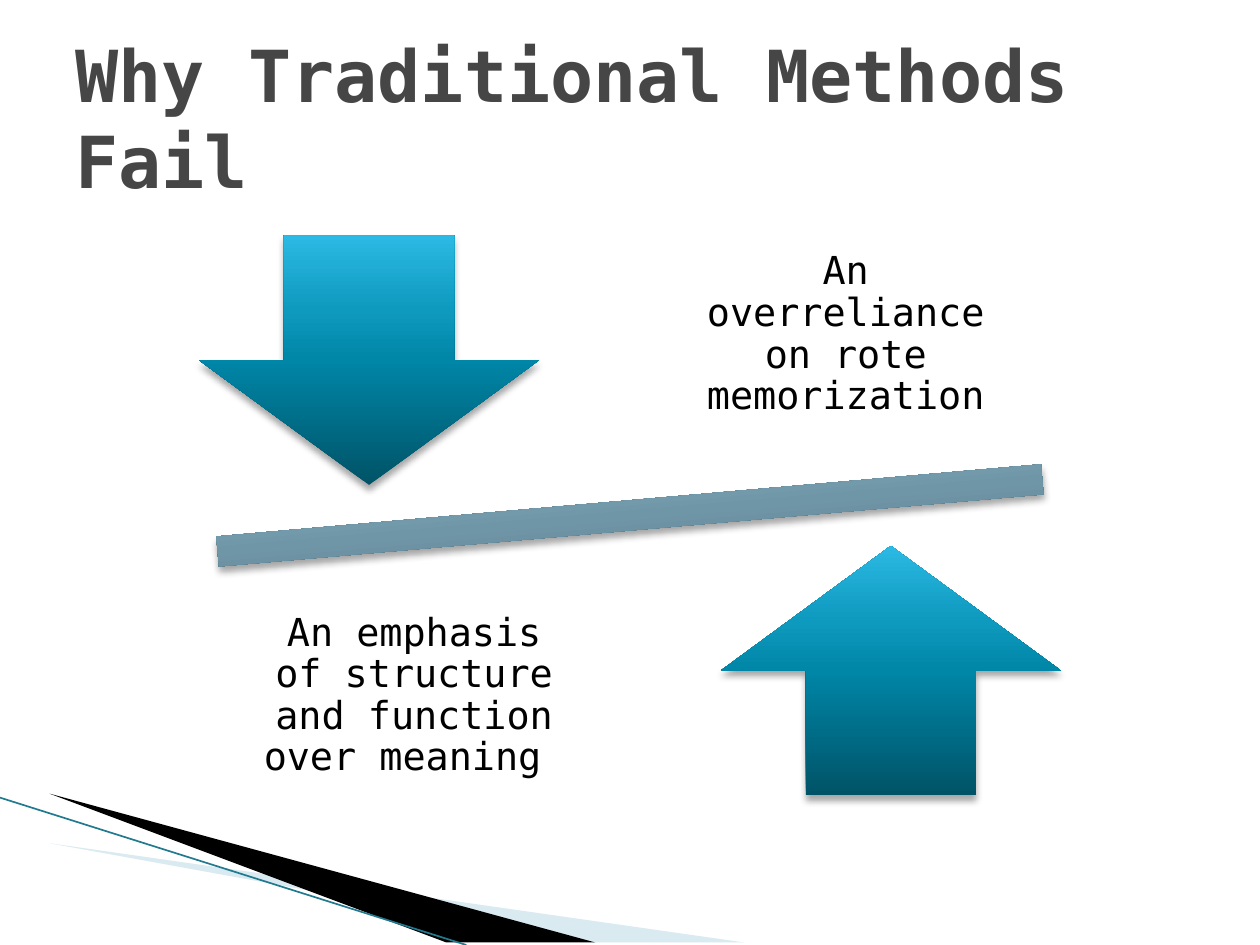
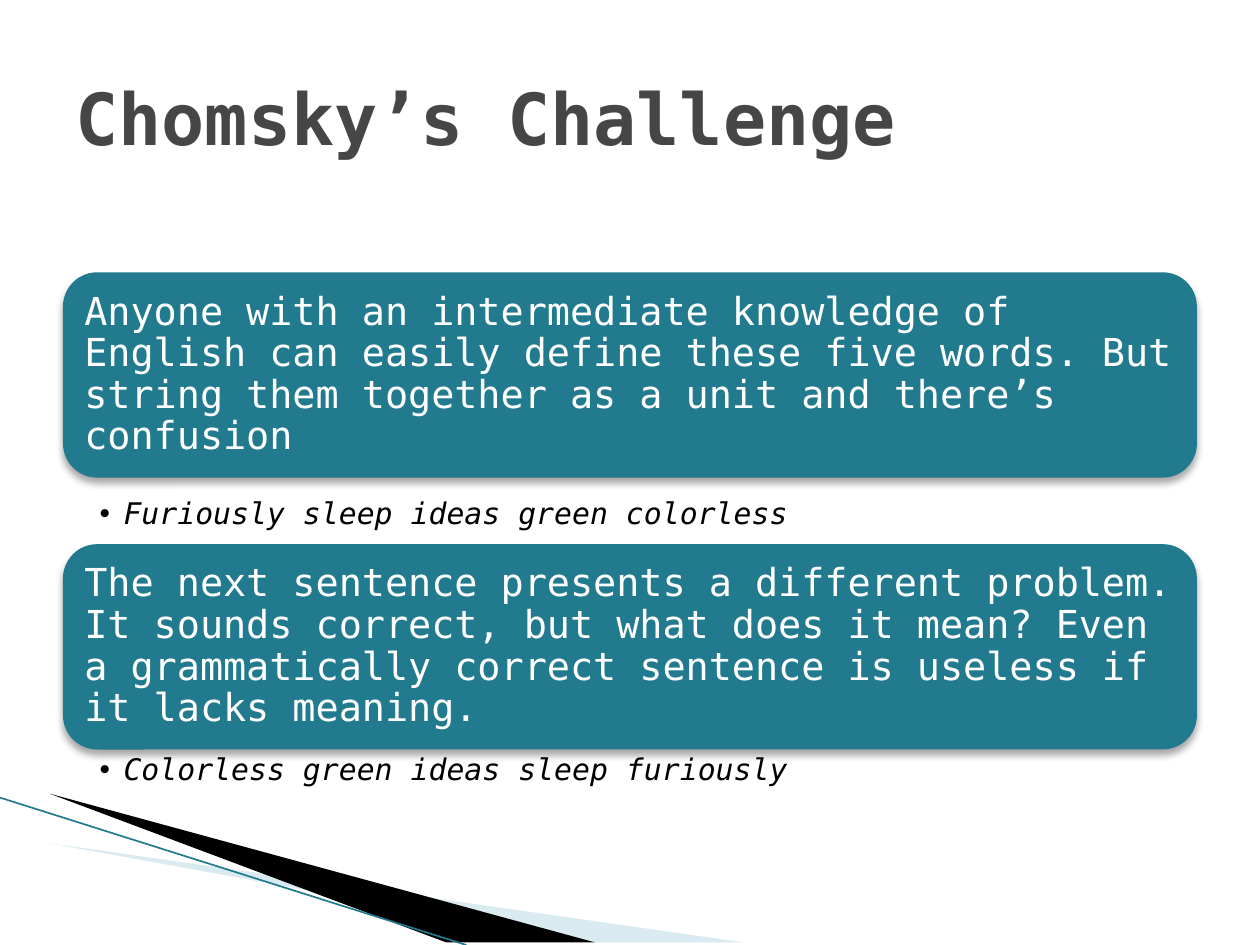
from dataclasses import dataclass

from lxml.etree import SubElement
from pptx import Presentation
from pptx.dml.color import RGBColor
from pptx.enum.shapes import MSO_CONNECTOR, MSO_SHAPE
from pptx.enum.text import MSO_ANCHOR, MSO_AUTO_SIZE, PP_ALIGN
from pptx.oxml.ns import qn
from pptx.util import Cm, Pt

# Content
SCALE = {
    "title": "Why Traditional Methods Fail",
    "sides": [  # arrow, text, side of the pivot
        (MSO_SHAPE.DOWN_ARROW, "An overreliance on rote memorization", 1),
        (MSO_SHAPE.UP_ARROW,
         "An emphasis of structure and function over meaning ", -1),
    ],
}
CLAIMS = {
    "title": "Chomsky’s Challenge",
    "items": [  # claim, its top, example, its top
        ("Anyone with an intermediate knowledge of English can easily define "
         "these five words. But string them together as a unit and there’s "
         "confusion", 5.49,
         "Furiously sleep ideas green colorless", 9.98),
        ("The next sentence presents a different problem. It sounds correct, "
         "but what does it mean? Even a grammatically correct sentence is "
         "useless if it lacks meaning.", 10.97,
         "Colorless green ideas sleep furiously", 15.14),
    ],
}


# Theme
@dataclass(frozen=True)
class Theme:
    font: str = "DejaVu Sans Mono"
    head: str = "464646"
    ink: str = "000000"
    paper: str = "FFFFFF"
    teal: str = "227A8F"
    pale: str = "A0CBDC"
    blue: tuple = ((0, "005367"), (50, "0086A7"), (70, "0E9ABE"), (100, "2CB9E3"))
    grey: tuple = ((0, "445E68"), (50, "6F96A7"), (70, "86AFC1"), (100, "A6D5E9"))
    big: int = 41
    mid: int = 22
    small: int = 17


LOOK = Theme()

# Layout, in centimetres
WIDE, HIGH = 25.4, 19.05
EDGE, SPAN = 1.27, 22.86
PIVOT = (12.7, 10.39)
BAR = (22.71, 2.59)
ARROW, ARROW_OFF = (6.86, 5.03), (-5.26, -3.13)
NOTE, NOTE_OFF = (7.32, 5.28), (4.35, -3.64)
BOX_HIGH, LINE_HIGH = 4.14, 1.02
HANG = 0.48
PALE_BAND = [(1.4, 16.51), (15.0, HIGH), (11.5, HIGH)]
DARK_BAND = [(1.37, 16.49), (11.5, HIGH), (9.4, HIGH)]
RULE = (0, 16.08, 9.4, HIGH)


def place(centre, off, size, sign=1):
    """Left, top, width and height of a part set off from a centre."""
    spot = [c + sign * o - s / 2 for c, o, s in zip(centre, off, size)]
    return [Cm(n) for n in (*spot, *size)]


def tint(fill, colour):
    fill.solid()
    fill.fore_color.rgb = RGBColor.from_string(colour)


def blend(fill, stops):
    fill.gradient()
    fill.gradient_angle = 90
    ramp = fill._xPr.find(qn("a:gradFill")).find(qn("a:gsLst"))
    ramp.clear()
    for spot, colour in stops:
        stop = SubElement(ramp, qn("a:gs"), pos=str(spot * 1000))
        SubElement(stop, qn("a:srgbClr"), val=colour)


def cast(shape):
    """Give a shape the soft shadow below it and no outline."""
    shape.line.fill.background()
    shape.shadow.inherit = False
    effect = shape._element.spPr.find(qn("a:effectLst"))
    shade = SubElement(effect, qn("a:outerShdw"), blurRad=str(Pt(4)),
                       dist=str(Pt(3)), dir="5400000", rotWithShape="0")
    colour = SubElement(shade, qn("a:srgbClr"), val=LOOK.ink)
    SubElement(colour, qn("a:alpha"), val="35000")


def write(shape, text, size, colour, pad=(0.25, 0.13, 0.25, 0.13),
          align=PP_ALIGN.LEFT, anchor=MSO_ANCHOR.MIDDLE, space=0.9):
    frame = shape.text_frame
    frame.text = text
    frame.word_wrap = True
    frame.auto_size = MSO_AUTO_SIZE.NONE
    frame.vertical_anchor = anchor
    (frame.margin_left, frame.margin_top,
     frame.margin_right, frame.margin_bottom) = [Cm(n) for n in pad]
    para = frame.paragraphs[0]
    para.alignment, para.line_spacing = align, space
    para.space_before = Pt(0)
    font = para.font
    font.name, font.size = LOOK.font, Pt(size)
    font.color.rgb = RGBColor.from_string(colour)
    return para


def bullet(para):
    props = para._p.get_or_add_pPr()
    props.set("marL", str(Cm(HANG)))
    props.set("indent", str(-Cm(HANG)))
    SubElement(props, qn("a:buChar"), char="•")


def move(shape, left, top, width, height):
    shape.left, shape.top, shape.width, shape.height = left, top, width, height


def band(slide, points, colour):
    start, *rest = points
    pen = slide.shapes.build_freeform(*start, scale=float(Cm(1)))
    pen.add_line_segments(rest)
    shape = pen.convert_to_shape()
    tint(shape.fill, colour)
    shape.line.fill.background()
    shape.shadow.inherit = False
    return shape


def start(deck, layout, title):
    """New slide with the corner bands and the title."""
    slide = deck.slides.add_slide(deck.slide_layouts.get_by_name(layout))
    pale = band(slide, PALE_BAND, LOOK.pale)
    colour = pale._element.spPr.find(qn("a:solidFill"))[0]
    SubElement(colour, qn("a:alpha"), val="40000")
    band(slide, DARK_BAND, LOOK.ink)
    rule = slide.shapes.add_connector(MSO_CONNECTOR.STRAIGHT,
                                      *[Cm(n) for n in RULE])
    rule.line.color.rgb = RGBColor.from_string(LOOK.teal)
    rule.line.width = Pt(0.95)
    SubElement(rule._element.spPr, qn("a:effectLst"))

    head = slide.shapes.title
    move(head, Cm(EDGE), Cm(0.76), Cm(SPAN), Cm(3.18))
    write(head, title, LOOK.big, LOOK.head, space=1.0).font.bold = True
    return slide


def tilt(deck):
    """Two arrows and two notes, balanced about a tilted bar."""
    slide = start(deck, "Title Only", SCALE["title"])
    add = slide.shapes.add_shape
    bar = add(MSO_SHAPE.MATH_MINUS, *place(PIVOT, (0, 0), BAR))
    bar.rotation = 355
    blend(bar.fill, LOOK.grey)
    cast(bar)
    for kind, text, sign in SCALE["sides"]:
        arrow = add(kind, *place(PIVOT, ARROW_OFF, ARROW, sign))
        blend(arrow.fill, LOOK.blue)
        cast(arrow)
        note = slide.shapes.add_textbox(*place(PIVOT, NOTE_OFF, NOTE, sign))
        write(note, text, LOOK.mid, LOOK.ink, pad=(0.43,) * 4,
              align=PP_ALIGN.CENTER)


def stack(deck):
    """Claims in rounded boxes, each with an example below."""
    slide = start(deck, "Two Content", CLAIMS["title"])
    bodies = list(slide.placeholders)[1:]
    for body, (claim, top, line, low) in zip(bodies, CLAIMS["items"]):
        box = slide.shapes.add_shape(MSO_SHAPE.ROUNDED_RECTANGLE, Cm(EDGE),
                                     Cm(top), Cm(SPAN), Cm(BOX_HIGH))
        tint(box.fill, LOOK.teal)
        cast(box)
        write(box, claim, LOOK.mid, LOOK.paper, pad=(0.23,) * 4)

        move(body, Cm(EDGE), Cm(low), Cm(SPAN), Cm(LINE_HIGH))
        para = write(body, line, LOOK.small, LOOK.ink,
                     pad=(0.74, 0.08, 0.43, 0.08), anchor=MSO_ANCHOR.TOP)
        bullet(para)
        para.font.italic = True


def main():
    deck = Presentation()
    deck.slide_width, deck.slide_height = Cm(WIDE), Cm(HIGH)
    tilt(deck)
    stack(deck)
    deck.save("out.pptx")


if __name__ == "__main__":
    main()
